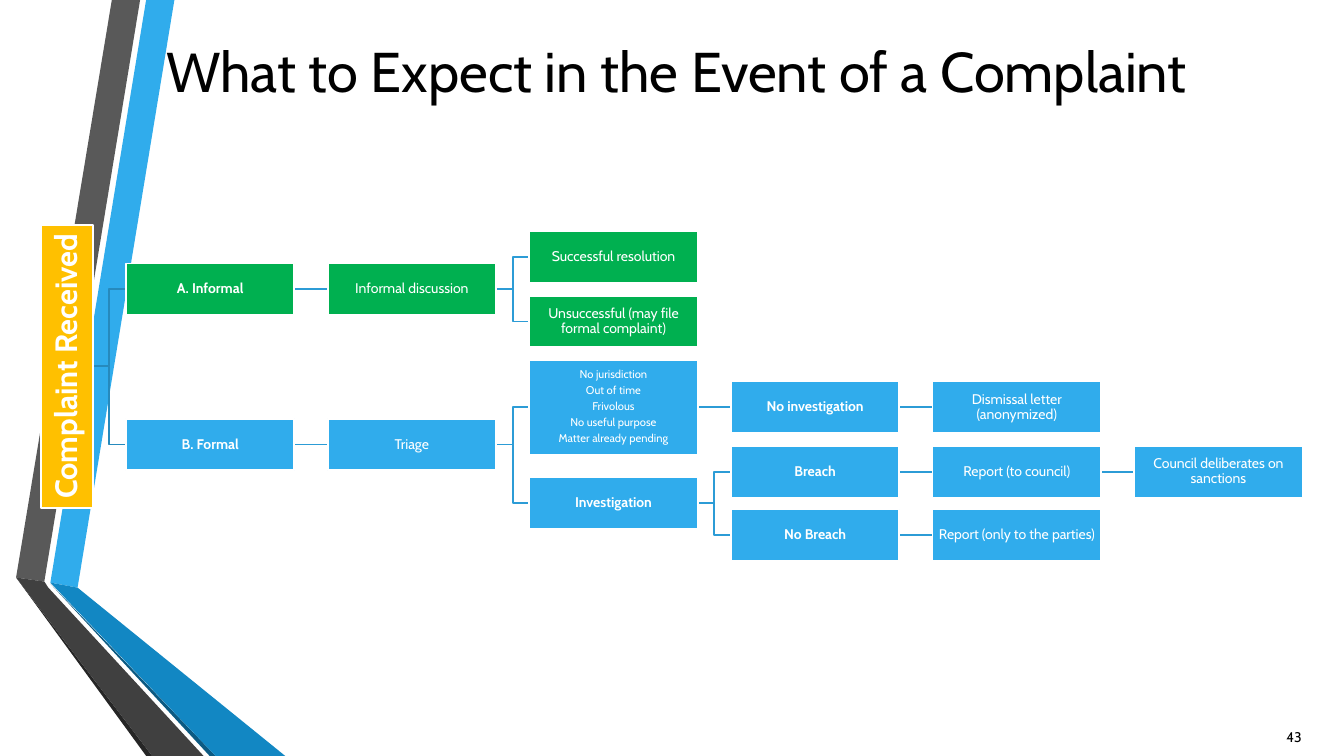
from dataclasses import dataclass
from lxml import etree
from pptx import Presentation
from pptx import util as u
from pptx.dml.color import RGBColor
from pptx.enum import shapes, text
from pptx.oxml import ns

TITLE = "What to Expect in the Event of a Complaint"
PAGE_NUMBER = "43"


@dataclass(frozen=True)
class Theme:
    font: str = "Cabin"
    blue: str = "30ACEC"
    green: str = "00B050"
    amber: str = "FFC000"
    white: str = "FFFFFF"
    black: str = "000000"
    branch: str = "2C9CD6"
    trunk: str = "268ABD"
    title_size: int = 40
    root_size: int = 22
    box_size: int = 10
    list_size: int = 8
    line_width: float = 1.25


THEME = Theme()

# Ribbon colour and corner points
RIBBONS = [
    (THEME.blue, [(0.5, 5.78), (0.77, 5.83), (1.73, 0), (1.45, 0)]),
    ("595959", [(1.39, 0), (1.11, 0), (0.16, 5.73), (0.44, 5.77)]),
    ("262626", [(0.16, 5.73), (1.45, 7.5), (1.51, 7.5)]),
    ("0C5A82", [(0.5, 5.79), (2.08, 7.5), (2.14, 7.5)]),
    ("1287C3", [(0.5, 5.78), (2.14, 7.5), (2.83, 7.5), (0.77, 5.83)]),
    ("404040", [(2.02, 7.5), (0.48, 5.83), (0.44, 5.77), (0.16, 5.73), (1.51, 7.5)]),
]

GROUNDS = ["No jurisdiction", "Out of time", "Frivolous", "No useful purpose",
           "Matter already pending"]

# Key: (parent, column, centre line, fill, bold, paragraphs)
STEPS = {
    "informal": ("root", 0, 2.87, THEME.green, True, ["A. Informal"]),
    "discussion": ("informal", 1, 2.87, THEME.green, False, ["Informal discussion"]),
    "success": ("discussion", 2, 2.55, THEME.green, False, ["Successful resolution"]),
    "failure": ("discussion", 2, 3.19, THEME.green, False,
                ["Unsuccessful (may file formal complaint)"]),
    "formal": ("root", 0, 4.41, THEME.blue, True, ["B. Formal"]),
    "triage": ("formal", 1, 4.41, THEME.blue, False, ["Triage"]),
    "grounds": ("triage", 2, 4.04, THEME.blue, False, GROUNDS),
    "dropped": ("grounds", 3, 4.04, THEME.blue, True, ["No investigation"]),
    "letter": ("dropped", 4, 4.04, THEME.blue, False, ["Dismissal letter (anonymized)"]),
    "investigation": ("triage", 2, 4.99, THEME.blue, True, ["Investigation"]),
    "breach": ("investigation", 3, 4.68, THEME.blue, True, ["Breach"]),
    "council report": ("breach", 4, 4.68, THEME.blue, False, ["Report (to council)"]),
    "sanctions": ("council report", 5, 4.68, THEME.blue, False,
                  ["Council deliberates on sanctions"]),
    "no breach": ("investigation", 3, 5.31, THEME.blue, True, ["No Breach"]),
    "party report": ("no breach", 4, 5.31, THEME.blue, False,
                     ["Report (only to the parties)"]),
}

FIRST_COLUMN, COLUMN_STEP = 1.25, 2.0
BOX_WIDTH, BOX_HEIGHT, LIST_HEIGHT = 1.67, 0.51, 0.94
ROOT_AREA = (0.41, 2.23, 0.51, 2.81)


def inches(values):
    return [u.Inches(value) for value in values]


def write(shape, paragraphs, size, colour, alignment, bold=False):
    frame = shape.text_frame
    frame.text = "\n".join(paragraphs)
    frame.word_wrap = True
    frame.vertical_anchor = text.MSO_ANCHOR.MIDDLE
    for paragraph in frame.paragraphs:
        paragraph.alignment = alignment
        font = paragraph.runs[0].font
        font.name, font.size, font.bold = THEME.font, u.Pt(size), bold
        font.color.rgb = RGBColor.from_string(colour)


def add_ribbon(slide, colour, corners):
    start, *others = [inches(corner) for corner in corners]
    builder = slide.shapes.build_freeform(*start)
    builder.add_line_segments(others, close=True)
    ribbon = builder.convert_to_shape()
    ribbon.shadow.inherit = False
    ribbon.fill.solid()
    ribbon.fill.fore_color.rgb = RGBColor.from_string(colour)
    ribbon.line.fill.background()


def add_box(slide, area, fill, paragraphs, size, bold, inset=0.01):
    box = slide.shapes.add_shape(shapes.MSO_SHAPE.RECTANGLE, *inches(area))
    box.shadow.inherit = False
    box.fill.solid()
    box.fill.fore_color.rgb = RGBColor.from_string(fill)
    box.line.color.rgb = RGBColor.from_string(THEME.white)
    box.line.width = u.Pt(THEME.line_width)
    write(box, paragraphs, size, THEME.white, text.PP_ALIGN.CENTER, bold)
    frame = box.text_frame
    frame.margin_left = frame.margin_right = u.Inches(inset)
    frame.margin_top = frame.margin_bottom = u.Inches(inset)
    for paragraph in frame.paragraphs:
        paragraph.line_spacing = 0.9
        paragraph.space_after = u.Pt(size * 0.35)
    return box


def add_step(slide, column, centre, fill, bold, paragraphs):
    is_list = len(paragraphs) > 1
    height = LIST_HEIGHT if is_list else BOX_HEIGHT
    area = (FIRST_COLUMN + column * COLUMN_STEP, centre - height / 2, BOX_WIDTH, height)
    size = THEME.list_size if is_list else THEME.box_size
    return add_box(slide, area, fill, paragraphs, size, bold)


def link(slide, parent, child, level, colour):
    """Join the parent's right side to the child's left side, behind the boxes."""
    kind = shapes.MSO_CONNECTOR.STRAIGHT if level else shapes.MSO_CONNECTOR.ELBOW
    connector = slide.shapes.add_connector(kind, 0, 0, 0, 0)
    connector.begin_connect(parent, 3)
    connector.end_connect(child, 1)
    connector.line.color.rgb = RGBColor.from_string(colour)
    connector.line.width = u.Pt(THEME.line_width)
    etree.SubElement(connector._element.spPr, ns.qn("a:effectLst"))
    return connector


def add_flow(slide):
    root = add_box(slide, ROOT_AREA, THEME.amber, ["Complaint Received"],
                   THEME.root_size, True, inset=0.02)
    root.text_frame._txBody.bodyPr.set("vert", "vert270")
    boxes = {"root": root}
    for key, (parent, *details) in STEPS.items():
        boxes[key] = add_step(slide, *details)
    for key, (parent, column, centre, *rest) in STEPS.items():
        level = parent != "root" and STEPS[parent][2] == centre
        colour = THEME.trunk if parent == "root" else THEME.branch
        connector = link(slide, boxes[parent], boxes[key], level, colour)
        root._element.addprevious(connector._element)


def main():
    presentation = Presentation()
    presentation.slide_width, presentation.slide_height = inches((13.33, 7.5))
    slide = presentation.slides.add_slide(presentation.slide_layouts[5])
    for colour, corners in RIBBONS:
        add_ribbon(slide, colour, corners)

    title = slide.shapes.title
    title.left, title.top, title.width, title.height = inches((0.41, 0.28, 12.6, 0.83))
    write(title, [TITLE], THEME.title_size, THEME.black, text.PP_ALIGN.CENTER)
    slide.shapes._spTree.append(title._element)  # text lies over the ribbons

    number = slide.shapes.add_textbox(*inches((12.6, 7.2, 0.41, 0.23)))
    write(number, [PAGE_NUMBER], THEME.box_size, THEME.black, text.PP_ALIGN.RIGHT)
    add_flow(slide)
    presentation.save("out.pptx")


if __name__ == "__main__":
    main()
